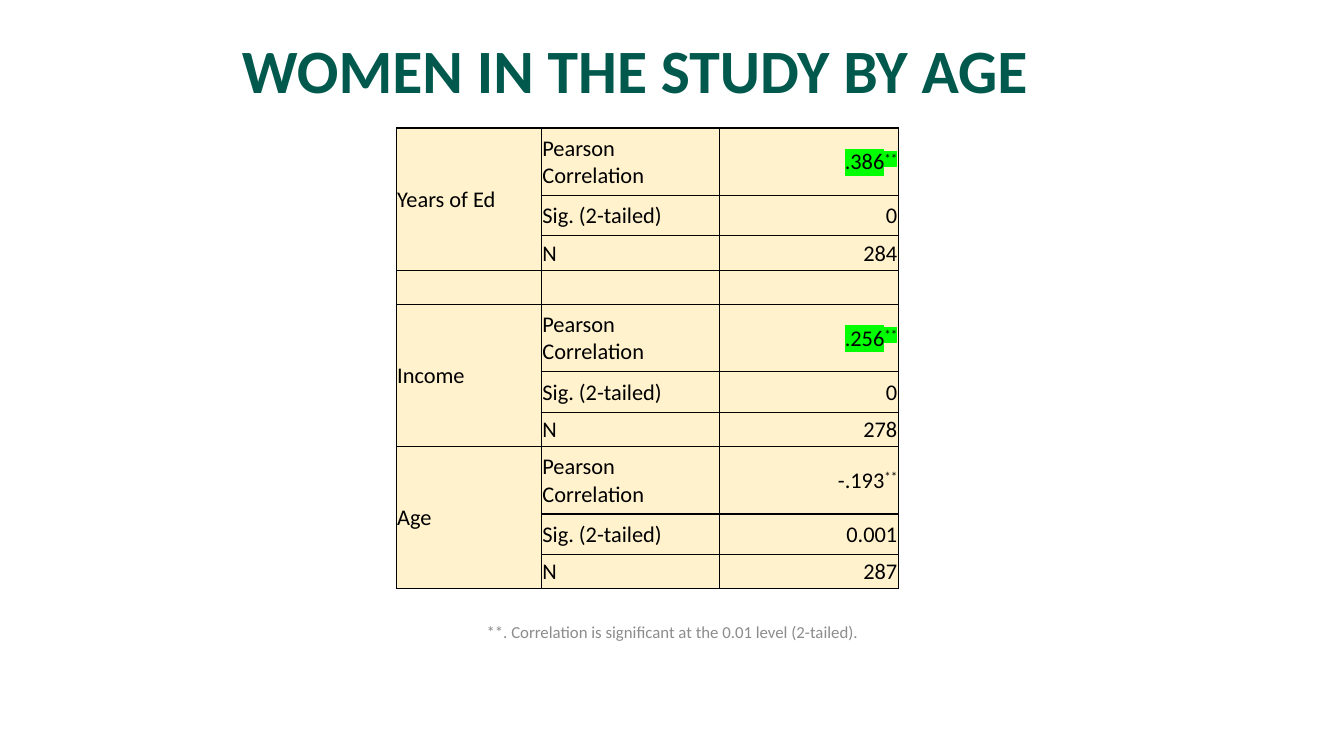
from dataclasses import dataclass

from lxml import etree
from pptx import Presentation
from pptx.dml.color import RGBColor
from pptx.enum import text
from pptx.oxml import ns
from pptx.util import Inches, Pt


@dataclass(frozen=True)
class Theme:
    font: str = "Calibri"
    title: str = "00594C"
    ink: str = "000000"
    note: str = "8C8C8C"
    cell: str = "FFF2CC"
    mark: str = "00FF00"
    title_size: int = 44
    cell_size: int = 16
    note_size: int = 12


THEME = Theme()

MEASURES = ["Pearson Correlation", "Sig. (2-tailed)", "N"]
# Variable, its three values, and whether the correlation is highlighted
GROUPS = [
    ("Years of Ed", [".386", "0", "284"], True),
    ("Income", [".256", "0", "278"], True),
    ("Age", ["-.193", "0.001", "287"], False),
]
START_ROWS = [0, 4, 7]  # row 3 stays blank
COL_WIDTHS = [1.44, 1.77, 1.77]
GROUP_HEIGHTS = [0.67, 0.4, 0.34]
ROW_HEIGHTS = GROUP_HEIGHTS + [0.34] + GROUP_HEIGHTS * 2


def sub(parent, tag, **attrs):
    return etree.SubElement(parent, ns.qn(tag), **attrs)


def style(p, size, color, align, bold=False):
    p.alignment = align
    p.font.name = THEME.font
    p.font.size = Pt(size)
    p.font.bold = bold
    p.font.color.rgb = RGBColor.from_string(color)


def place(sp, left, top, width, height):
    sp.left, sp.top = Inches(left), Inches(top)
    sp.width, sp.height = Inches(width), Inches(height)


def add_title(slide, words):
    sp = slide.shapes.title
    place(sp, 0.55, 0, 11.5, 1.45)
    tf = sp.text_frame
    tf.text = words
    tf.vertical_anchor = text.MSO_ANCHOR.MIDDLE
    p = tf.paragraphs[0]
    p.line_spacing = 0.9
    style(p, THEME.title_size, THEME.title, text.PP_ALIGN.CENTER, bold=True)


def add_note(slide, words):
    sp = slide.shapes.add_textbox(Inches(4.42), Inches(6.07), Inches(4.5), Inches(0.4))
    tf = sp.text_frame
    tf.word_wrap = True
    tf.vertical_anchor = text.MSO_ANCHOR.MIDDLE
    tf.text = words
    style(tf.paragraphs[0], THEME.note_size, THEME.note, text.PP_ALIGN.CENTER)


def format_cell(cell, align):
    cell.margin_left = cell.margin_right = cell.margin_top = Inches(0.01)
    cell.margin_bottom = 0
    cell.vertical_anchor = text.MSO_ANCHOR.MIDDLE
    style(cell.text_frame.paragraphs[0], THEME.cell_size, THEME.ink, align)
    # Borders come before the fill in the cell properties
    tc_pr = cell._tc.get_or_add_tcPr()
    for side in ("a:lnL", "a:lnR", "a:lnT", "a:lnB"):
        fill = sub(sub(tc_pr, side, w=str(Pt(1))), "a:solidFill")
        sub(fill, "a:srgbClr", val=THEME.ink)
    cell.fill.solid()
    cell.fill.fore_color.rgb = RGBColor.from_string(THEME.cell)


def write_correlation(cell, value, highlighted):
    p = cell.text_frame.paragraphs[0]
    for words, raised in ((value, False), ("**", True)):
        r = p.add_run()
        r.text = words
        r_pr = r._r.get_or_add_rPr()
        if raised:
            r_pr.set("baseline", "30000")
        if highlighted:
            sub(sub(r_pr, "a:highlight"), "a:srgbClr", val=THEME.mark)


def add_correlation_table(slide):
    frame = slide.shapes.add_table(
        len(ROW_HEIGHTS), len(COL_WIDTHS), Inches(3.93), Inches(1.27),
        Inches(sum(COL_WIDTHS)), Inches(sum(ROW_HEIGHTS)))
    table = frame.table
    table.first_row = table.horz_banding = False
    for column, width in zip(table.columns, COL_WIDTHS):
        column.width = Inches(width)
    for row, height in zip(table.rows, ROW_HEIGHTS):
        row.height = Inches(height)

    # Wording
    for top, (variable, values, highlighted) in zip(START_ROWS, GROUPS):
        table.cell(top, 0).text = variable
        table.cell(top, 0).merge(table.cell(top + 2, 0))
        for i, (measure, value) in enumerate(zip(MEASURES, values)):
            table.cell(top + i, 1).text = measure
            if i == 0:
                write_correlation(table.cell(top, 2), value, highlighted)
            else:
                table.cell(top + i, 2).text = value

    # Formatting
    aligns = [text.PP_ALIGN.LEFT, text.PP_ALIGN.LEFT, text.PP_ALIGN.RIGHT]
    for row in table.rows:
        for cell, align in zip(row.cells, aligns):
            format_cell(cell, align)


def main():
    prs = Presentation()
    prs.slide_width, prs.slide_height = Inches(13.33), Inches(7.5)
    slide = prs.slides.add_slide(prs.slide_layouts[5])
    add_title(slide, "WOMEN IN THE STUDY BY AGE")
    add_note(slide, "**. Correlation is significant at the 0.01 level (2-tailed).")
    add_correlation_table(slide)
    prs.save("out.pptx")


if __name__ == "__main__":
    main()
